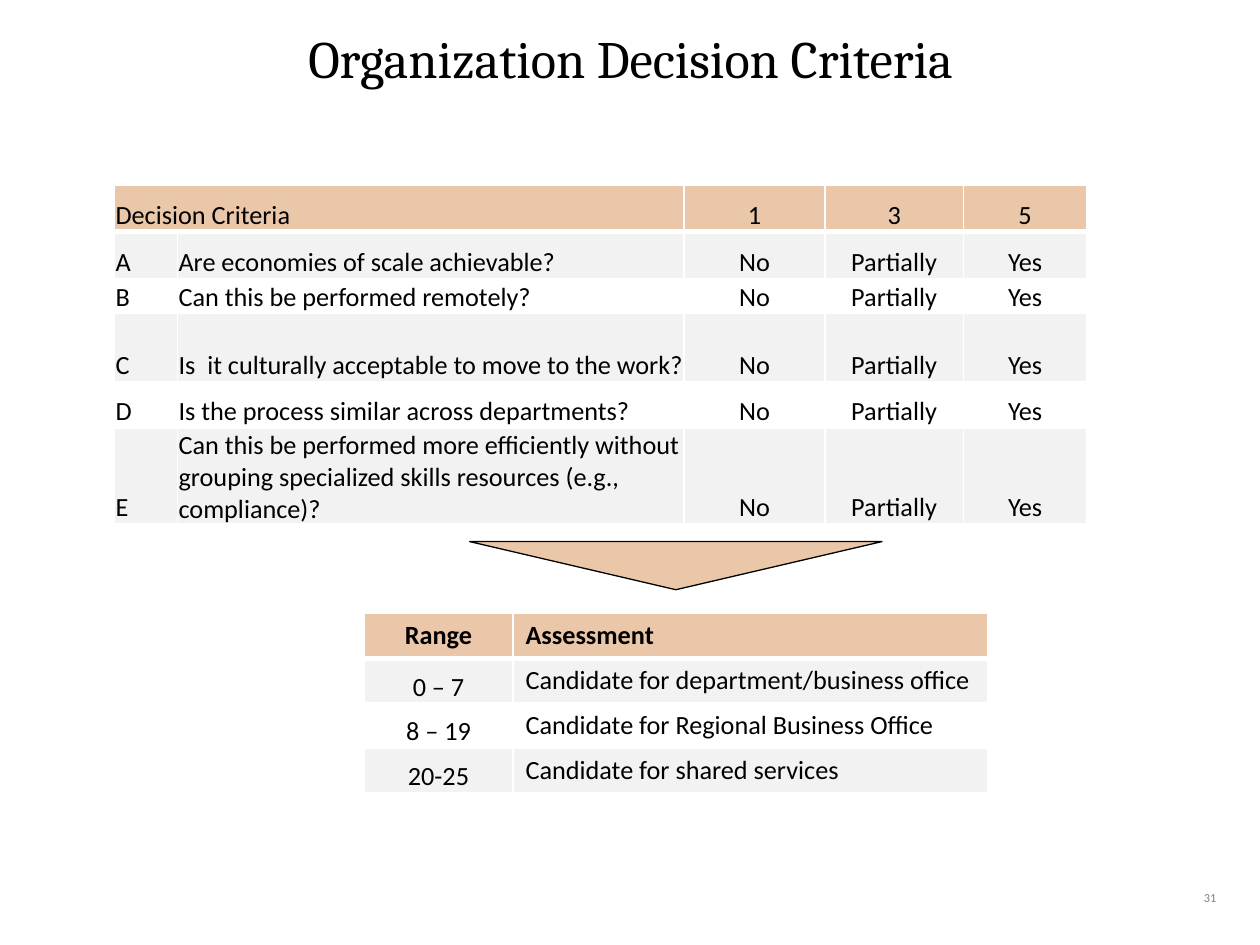
from lxml.etree import SubElement
from pptx import Presentation
from pptx.dml.color import RGBColor
from pptx.enum.shapes import MSO_SHAPE
from pptx.enum.text import MSO_ANCHOR, PP_ALIGN
from pptx.oxml import parse_xml
from pptx.oxml.ns import nsdecls, qn
from pptx.util import Cm, Pt

TITLE = "Organization Decision Criteria"
PAGE = "31"
QUESTIONS = [
    "Are economies of scale achievable?",
    "Can this be performed remotely?",
    "Is  it culturally acceptable to move to the work?",
    "Is the process similar across departments?",
    "Can this be performed more efficiently without grouping specialized "
    "skills resources (e.g., compliance)?",
]
CRITERIA = [["Decision Criteria", "", "1", "3", "5"]] + [
    [letter, question, "No", "Partially", "Yes"]
    for letter, question in zip("ABCDE", QUESTIONS)
]
RANGES = [
    ["Range", "Assessment"],
    ["0 – 7", "Candidate for department/business office"],
    ["8 – 19", "Candidate for Regional Business Office"],
    ["20-25", "Candidate for shared services"],
]
TAN, GREY, WHITE, BLACK = "EBC7AA", "F2F2F2", "FFFFFF", "000000"
LEFT, CENTER, RIGHT = PP_ALIGN.LEFT, PP_ALIGN.CENTER, PP_ALIGN.RIGHT
TIGHT = {"vertical_anchor": MSO_ANCHOR.BOTTOM, "margin_left": Cm(0.02),
         "margin_right": Cm(0.02), "margin_top": Cm(0.02), "margin_bottom": 0}


def rgb(value):
    return RGBColor.from_string(value)


def box(*lengths):
    return [Cm(n) for n in lengths]


def write(tf, text, align=LEFT, color=BLACK, **font):
    p = tf.paragraphs[0]
    p.alignment = align
    r = p.add_run()
    r.text = text
    r.font.color.rgb = rgb(color)
    for name, value in font.items():
        setattr(r.font, name, value)
    return r


def set_borders(cell, top, bottom):
    """Give the cell white borders; top and bottom widths are in points."""
    widths = {"lnL": 1, "lnR": 1, "lnT": top, "lnB": bottom}
    tc_pr = cell._tc.get_or_add_tcPr()
    for i, (tag, width) in enumerate(widths.items()):
        tc_pr.insert(i, parse_xml(
            f'<a:{tag} {nsdecls("a")} w="{Pt(width)}"><a:solidFill>'
            f'<a:srgbClr val="{WHITE}"/></a:solidFill></a:{tag}>'))


def add_grid(s, rows, left, top, widths, heights, aligns, tight_cell, bold_head):
    frame = s.shapes.add_table(len(rows), len(widths),
                               *box(left, top, sum(widths), sum(heights)))
    table = frame.table
    for col, width in zip(table.columns, widths):
        col.width = Cm(width)
    for i, (row, height) in enumerate(zip(rows, heights)):
        table.rows[i].height = Cm(height)
        for j, text in enumerate(row):
            cell = table.cell(i, j)
            cell.fill.solid()
            cell.fill.fore_color.rgb = rgb(TAN if i == 0 else GREY if i % 2 else WHITE)
            set_borders(cell, 3 if i == 1 else 1, 3 if i == 0 else 1)
            if tight_cell(i, j):
                for name, value in TIGHT.items():
                    setattr(cell, name, value)
            if text:
                write(cell.text_frame, text, aligns[j], name="Calibri",
                      size=Pt(15), bold=bold_head and i == 0)
    return table


prs = Presentation()
prs.slide_width, prs.slide_height = box(25.4, 19.05)
s = prs.slides.add_slide(prs.slide_layouts[5])

add_grid(s, RANGES, 7.34, 12.37, [3, 9.58], [0.89] * 4, [CENTER, LEFT],
         lambda i, j: i > 0 and j == 0, True)

title = s.shapes.title
title.left, title.top, title.width, title.height = box(0.36, 0.2, 24.71, 1.9)
title.text_frame.vertical_anchor = MSO_ANCHOR.MIDDLE
r = write(title.text_frame, TITLE, CENTER, name="Cambria", size=Pt(30))
effects = parse_xml(
    f'<a:effectLst {nsdecls("a")}><a:outerShdw dist="25400" dir="2700000">'
    '<a:srgbClr val="C0C0C0"/></a:outerShdw></a:effectLst>')
r.font._element.find(qn("a:solidFill")).addnext(effects)

number = s.shapes.add_textbox(*box(18.85, 17.58, 5.92, 1.02))
number.text_frame.word_wrap = True
number.text_frame.vertical_anchor = MSO_ANCHOR.MIDDLE
write(number.text_frame, PAGE, RIGHT, "7F7F7F", name="Calibri", size=Pt(7))

criteria = add_grid(s, CRITERIA, 2.31, 3.73, [1.27, 10.21, 2.84, 2.79, 2.49],
                    [0.94, 0.94, 0.71, 1.37, 0.94, 1.93],
                    [LEFT, LEFT, CENTER, CENTER, CENTER], lambda i, j: True, False)
criteria.cell(0, 0).merge(criteria.cell(0, 1))

arrow = s.shapes.add_shape(MSO_SHAPE.ISOSCELES_TRIANGLE, *box(9.47, 10.92, 8.31, 0.97))
arrow.shadow.inherit = False
arrow.fill.solid()
arrow.fill.fore_color.rgb = rgb(TAN)
arrow.line.color.rgb = rgb(BLACK)
arrow.line.width = Pt(0.75)
arrow._element.spPr.find(qn("a:xfrm")).set("flipV", "1")

prs.save("out.pptx")
